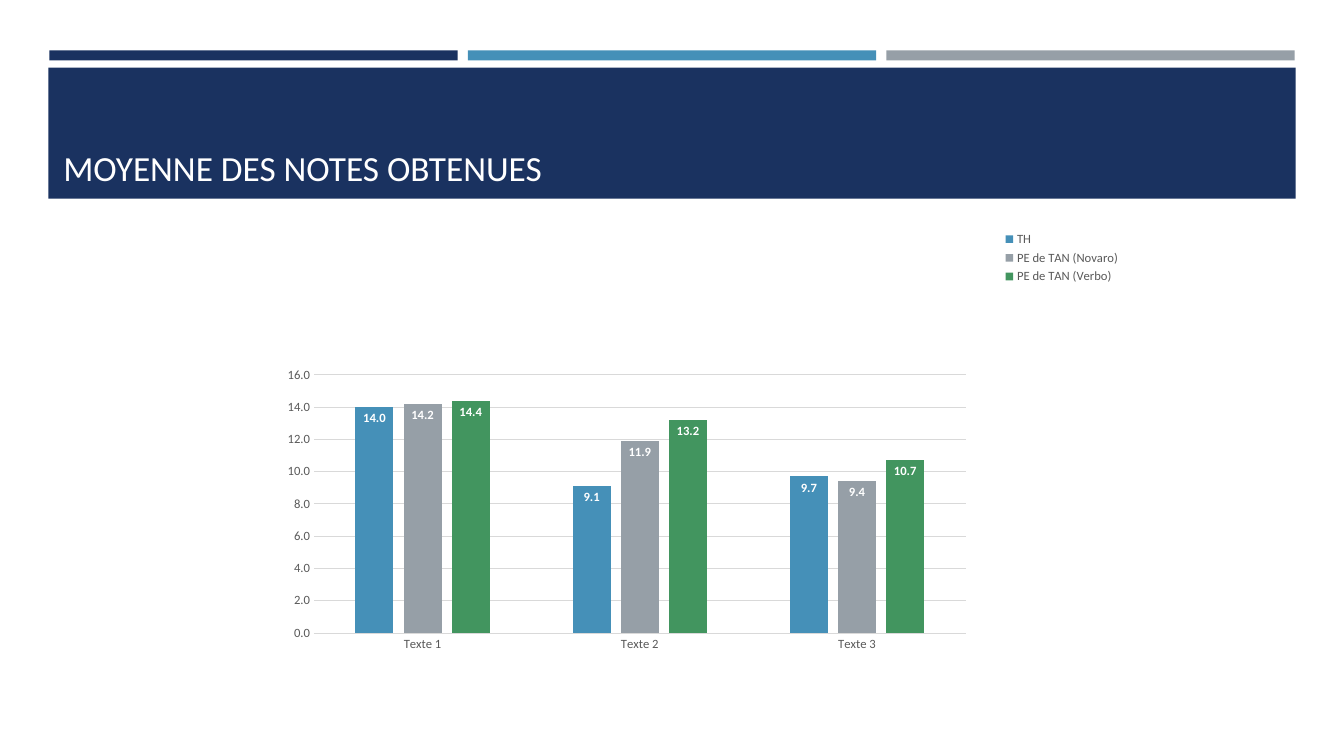
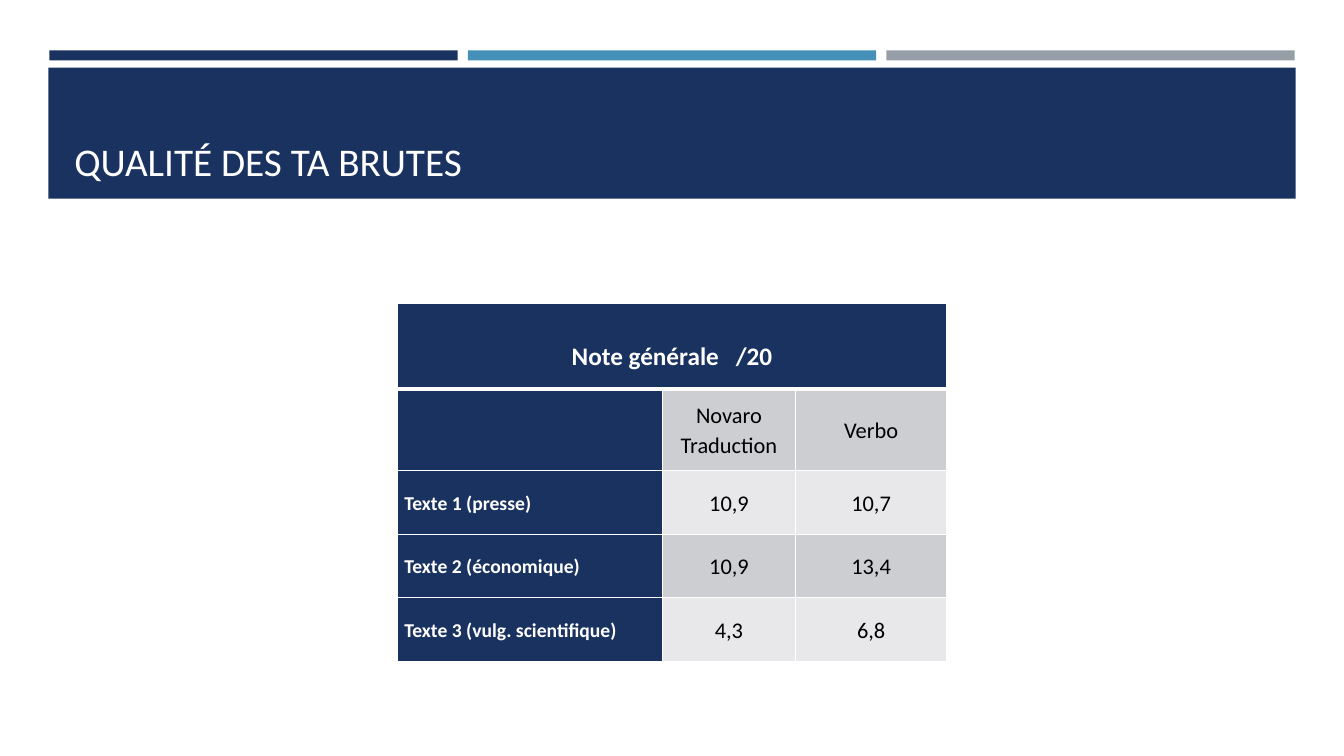
from dataclasses import dataclass

from lxml import etree
from pptx import Presentation
from pptx.chart.data import CategoryChartData
from pptx.dml.color import RGBColor
from pptx.enum.chart import XL_CHART_TYPE, XL_LABEL_POSITION, XL_LEGEND_POSITION, XL_TICK_MARK
from pptx.enum.shapes import MSO_SHAPE
from pptx.enum.text import MSO_ANCHOR, PP_ALIGN
from pptx.oxml import parse_xml
from pptx.oxml.ns import nsdecls, qn
from pptx.util import Inches, Pt

RECTANGLE = MSO_SHAPE.RECTANGLE
COLUMNS = XL_CHART_TYPE.COLUMN_CLUSTERED
INSIDE_END = XL_LABEL_POSITION.INSIDE_END
CORNER = XL_LEGEND_POSITION.CORNER
NO_TICK = XL_TICK_MARK.NONE
BOTTOM, MIDDLE = MSO_ANCHOR.BOTTOM, MSO_ANCHOR.MIDDLE
LEFT, CENTER = PP_ALIGN.LEFT, PP_ALIGN.CENTER


@dataclass(frozen=True)
class Theme:
    """Colours, font and type sizes of the deck."""
    font: str = "Calibri"
    navy: str = "1A3260"
    blue: str = "4590B8"
    grey: str = "969FA7"
    green: str = "42955F"
    white: str = "FFFFFF"
    black: str = "000000"
    axis_text: str = "595959"
    grid: str = "D9D9D9"
    dark_band: str = "CDCED2"
    light_band: str = "E8E8EA"
    title: float = 28
    small_title: float = 25.2
    table_title: float = 18
    table_body: float = 16
    table_label: float = 14
    chart_text: float = 9


T = Theme()

CATEGORIES = ["Texte 1", "Texte 2", "Texte 3"]
SERIES = [
    ("TH", T.blue, (14.0, 9.1, 9.7)),
    ("PE de TAN (Novaro)", T.grey, (14.2, 11.9, 9.4)),
    ("PE de TAN (Verbo)", T.green, (14.4, 13.2, 10.7)),
]
TABLE_TITLE = ("Note générale", " ", "/20")
TABLE_ROWS = [
    ("", "Novaro Traduction", "Verbo"),
    ("Texte 1 (presse)", "10,9", "10,7"),
    ("Texte 2 (économique)", "10,9", "13,4"),
    ("Texte 3 (vulg. scientifique)", "4,3", "6,8"),
]
COLUMN_WIDTHS = (2.63, 1.32, 1.5)
ROW_HEIGHTS = (0.85, 0.81, 0.63, 0.63, 0.63)


def rgb(color):
    """Return a colour object for a hex string."""
    return RGBColor.from_string(color)


def style_font(font, size, color, bold=False):
    """Apply the theme font with a size, colour and weight."""
    font.name, font.size, font.bold = T.font, Pt(size), bold
    font.color.rgb = rgb(color)


def add_bar(slide, left, top, width, height, color):
    """Add a plain filled rectangle."""
    sp = slide.shapes.add_shape(RECTANGLE, Inches(left), Inches(top), Inches(width), Inches(height))
    sp.shadow.inherit = False
    sp.fill.solid()
    sp.fill.fore_color.rgb = rgb(color)
    sp.line.fill.background()


def add_title(slide, text, left, top, size):
    """Add the white title, anchored to the bottom of its box."""
    sp = slide.shapes.add_textbox(Inches(left), Inches(top), Inches(12.06), Inches(1.11))
    tf = sp.text_frame
    tf.word_wrap = True
    tf.vertical_anchor = BOTTOM
    tf.text = text
    style_font(tf.paragraphs[0].runs[0].font, size, T.white)


def add_titled_slide(prs, title, left, top, size):
    """Add a blank slide with the shared bars, band and title."""
    slide = prs.slides.add_slide(prs.slide_layouts[6])
    for i, color in enumerate((T.navy, T.blue, T.grey)):
        add_bar(slide, 0.49 + i * 4.15, 0.5, 4.05, 0.1, color)
    add_bar(slide, 0.48, 0.67, 12.37, 1.3, T.navy)
    add_title(slide, title, left, top, size)
    return slide


def place_plot(chart, x, y, w, h):
    """Fix the inner plot area as fractions of the chart."""
    area = chart.element.find(".//" + qn("c:plotArea"))
    for old in area.findall(qn("c:layout")):
        area.remove(old)
    layout = parse_xml(f"<c:layout {nsdecls('c')}><c:manualLayout/></c:layout>")
    settings = [("layoutTarget", "inner"), ("xMode", "edge"), ("yMode", "edge"),
                ("x", x), ("y", y), ("w", w), ("h", h)]
    for tag, value in settings:
        etree.SubElement(layout[0], qn("c:" + tag)).set("val", str(value))
    area.insert(0, layout)


def style_axes(chart):
    """Style the category axis, value axis and gridlines."""
    for axis in (chart.category_axis, chart.value_axis):
        axis.major_tick_mark = axis.minor_tick_mark = NO_TICK
        style_font(axis.tick_labels.font, T.chart_text, T.axis_text)
    val_axis = chart.value_axis
    val_axis.minimum_scale, val_axis.maximum_scale, val_axis.major_unit = 0, 16, 2
    val_axis.tick_labels.number_format = "0.0"
    val_axis.tick_labels.number_format_is_linked = False
    val_axis.format.line.fill.background()
    for line in (chart.category_axis.format.line, val_axis.major_gridlines.format.line):
        line.color.rgb = rgb(T.grid)
        line.width = Pt(0.75)


def style_series(series, color):
    """Colour a series and show its values inside the columns."""
    series.format.fill.solid()
    series.format.fill.fore_color.rgb = rgb(color)
    labels = series.data_labels
    labels.show_value = True
    labels.position = INSIDE_END
    labels.number_format = "0.0"
    labels.number_format_is_linked = False
    style_font(labels.font, T.chart_text, T.white, True)


def add_marks_chart(slide):
    """Add the clustered columns of average marks."""
    data = CategoryChartData(number_format="0.0")
    data.categories = CATEGORIES
    for name, _, values in SERIES:
        data.add_series(name, values)
    frame = slide.shapes.add_chart(COLUMNS, Inches(2.36), Inches(2.26), Inches(8.77), Inches(4.65), data)
    chart = frame.chart
    chart.has_title = False
    style_font(chart.font, T.chart_text, T.axis_text)
    chart.has_legend = True
    chart.legend.position = CORNER
    chart.legend.include_in_layout = False
    style_font(chart.legend.font, T.chart_text, T.axis_text)
    style_axes(chart)
    plot = chart.plots[0]
    plot.vary_by_categories = False
    plot.gap_width, plot.overlap = 219, -27
    for series, (_, color, _) in zip(plot.series, SERIES):
        style_series(series, color)
    place_plot(chart, 0.086, 0.314, 0.737, 0.551)


def set_borders(cell, **widths):
    """Draw white borders, 1 pt wide unless a side is given."""
    tc_pr = cell._tc.get_or_add_tcPr()
    for i, side in enumerate(("L", "R", "T", "B")):
        width = Pt(widths.get(side, 1))
        tc_pr.insert(i, parse_xml(
            f'<a:ln{side} {nsdecls("a")} w="{width}"><a:solidFill>'
            f'<a:srgbClr val="{T.white}"/></a:solidFill></a:ln{side}>'))


def format_cell(cell, fill, size, color, bold, align):
    """Set the fill, margins and text style of a cell."""
    cell.fill.solid()
    cell.fill.fore_color.rgb = rgb(fill)
    cell.vertical_anchor = MIDDLE
    cell.margin_left = cell.margin_right = Inches(0.07)
    cell.margin_top = cell.margin_bottom = 0
    p = cell.text_frame.paragraphs[0]
    p.alignment = align
    p.line_spacing = 1.07
    for r in p.runs:
        style_font(r.font, size, color, bold)


def fill_table_title(cell):
    """Write the heading with a widened space before the scale."""
    p = cell.text_frame.paragraphs[0]
    for text in TABLE_TITLE:
        p.add_run().text = text
    p.runs[1]._r.get_or_add_rPr().set("spc", "800")
    format_cell(cell, T.navy, T.table_title, T.white, True, CENTER)
    cell.margin_top = Inches(0.18)


def add_quality_table(slide):
    """Add the table of general marks."""
    frame = slide.shapes.add_table(len(ROW_HEIGHTS), len(COLUMN_WIDTHS), Inches(3.94), Inches(3.01),
                                   Inches(sum(COLUMN_WIDTHS)), Inches(sum(ROW_HEIGHTS)))
    table = frame.table
    table.first_row = table.horz_banding = False
    for column, width in zip(table.columns, COLUMN_WIDTHS):
        column.width = Inches(width)
    for row, height in zip(table.rows, ROW_HEIGHTS):
        row.height = Inches(height)
    title = table.cell(0, 0)
    title.merge(table.cell(0, len(COLUMN_WIDTHS) - 1))
    fill_table_title(title)
    for cell in table.rows[0].cells:
        set_borders(cell, B=3)
    for i, texts in enumerate(TABLE_ROWS, 1):
        band = T.dark_band if i % 2 else T.light_band
        for j, text in enumerate(texts):
            cell = table.cell(i, j)
            cell.text_frame.text = text
            if j == 0:
                format_cell(cell, T.navy, T.table_label, T.white, True, LEFT)
            else:
                format_cell(cell, band, T.table_body, T.black, False, CENTER)
            set_borders(cell, T=3 if i == 1 else 1)


def main():
    """Build and save the deck."""
    prs = Presentation()
    prs.slide_width, prs.slide_height = Inches(13.33), Inches(7.5)
    add_marks_chart(add_titled_slide(prs, "MOYENNE DES NOTES OBTENUES", 0.53, 0.81, T.small_title))
    add_quality_table(add_titled_slide(prs, "QUALITÉ DES TA BRUTES", 0.64, 0.77, T.title))
    prs.save("out.pptx")


if __name__ == "__main__":
    main()
